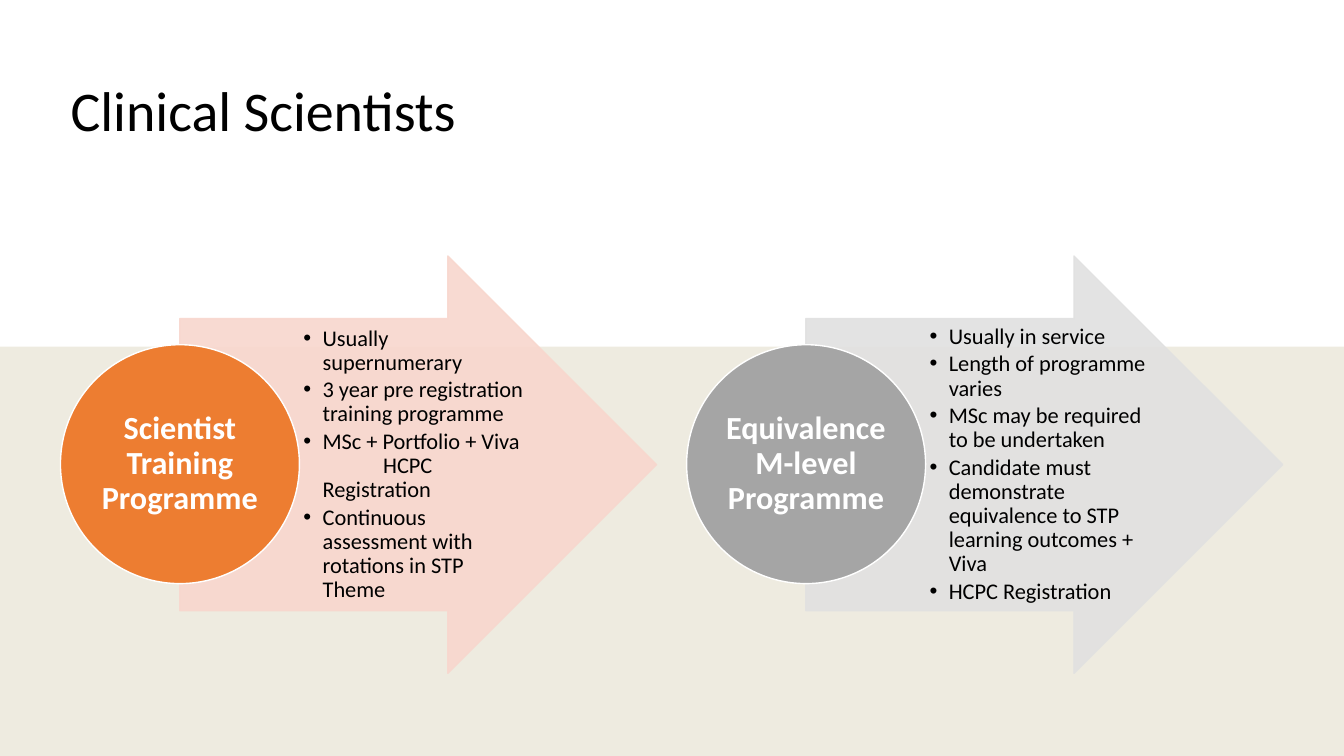
"""Build the Clinical Scientists slide with two training routes."""
from lxml import etree
from pptx import Presentation
from pptx.dml.color import RGBColor
from pptx.enum.shapes import MSO_SHAPE
from pptx.enum.text import MSO_ANCHOR, PP_ALIGN
from pptx.oxml.ns import qn
from pptx.util import Inches, Pt

RECT, ARROW, OVAL = MSO_SHAPE.RECTANGLE, MSO_SHAPE.RIGHT_ARROW, MSO_SHAPE.OVAL
MIDDLE, LEFT, CENTER = MSO_ANCHOR.MIDDLE, PP_ALIGN.LEFT, PP_ALIGN.CENTER
COLORS = {
    "base": "F2F2F2", "tint": "BF9000", "white": "FFFFFF", "black": "000000",
    "orange": "ED7D31", "peach": "F8D7CE", "grey": "A5A5A5", "silver": "E1E1E1",
}
ROUTES = [
    ("Scientist Training Programme", "orange", "peach", [
        "Usually supernumerary",
        "3 year pre registration training programme",
        "MSc + Portfolio + Viva\n\tHCPC Registration",
        "Continuous assessment with rotations in STP Theme",
    ]),
    ("Equivalence M-level Programme", "grey", "silver", [
        "Usually in service",
        "Length of programme varies",
        "MSc may be required to be undertaken",
        "Candidate must demonstrate equivalence to STP learning outcomes + Viva",
        "HCPC Registration",
    ]),
]
ROUTE_PITCH = 46.59


class Deck:
    """Hold the style and current slide; places are percentages of the slide."""

    def __init__(self, prs, font="Calibri"):
        self.prs, self.font = prs, font
        self.s = prs.slides.add_slide(prs.slide_layouts[5])

    def box(self, x, y, w, h):
        """Turn percentages into slide lengths."""
        W, H = self.prs.slide_width, self.prs.slide_height
        return [int(v * size / 100) for v, size in ((x, W), (y, H), (w, W), (h, H))]

    def set_alpha(self, sp, percent):
        """Make the fill and line colours of a shape translucent."""
        for clr in sp._element.spPr.iter(qn("a:srgbClr")):
            etree.SubElement(clr, qn("a:alpha"), val=str(percent * 1000))

    def shape(self, kind, place, fill, line=None, alpha=100):
        """Add a filled preset shape."""
        sp = self.s.shapes.add_shape(kind, *self.box(*place))
        sp.shadow.inherit = False
        sp.fill.solid()
        sp.fill.fore_color.rgb = RGBColor.from_string(COLORS[fill])
        if line:
            sp.line.color.rgb = RGBColor.from_string(COLORS[line])
            sp.line.width = Pt(1)
        else:
            sp.line.fill.background()
        if alpha < 100:
            self.set_alpha(sp, alpha)
        return sp

    def frame(self, sp, left, top, right, bottom):
        """Wrap and centre text vertically within inch margins."""
        tf = sp.text_frame
        tf.word_wrap, tf.vertical_anchor = True, MIDDLE
        tf.margin_left, tf.margin_top = Inches(left), Inches(top)
        tf.margin_right, tf.margin_bottom = Inches(right), Inches(bottom)
        return tf

    def add_text(self, p, text, size, color, align=LEFT, after=0, bold=False):
        """Fill a paragraph with text, run by run."""
        p.alignment, p.line_spacing, p.space_after = align, 0.9, Pt(after)
        p.space_before = Pt(0)
        for i, part in enumerate(text.split("\n")):
            if i:
                p.add_line_break()
            r = p.add_run()
            r.text = part
            r.font.name, r.font.size, r.font.bold = self.font, Pt(size), bold
            r.font.color.rgb = RGBColor.from_string(COLORS[color])

    def title(self, text, place):
        """Place the title in front of the shapes drawn so far."""
        sp = self.s.shapes.title
        sp.left, sp.top, sp.width, sp.height = self.box(*place)
        self.s.shapes[-1]._element.addnext(sp._element)
        tf = self.frame(sp, 0.1, 0.05, 0.1, 0.05)
        self.add_text(tf.paragraphs[0], text, 40, "black", after=6)

    def bullets(self, items, place):
        """Add a bulleted text box."""
        tf = self.frame(self.s.shapes.add_textbox(*self.box(*place)), 0.04, 0.01, 0.02, 0.01)
        for i, item in enumerate(items):
            p = tf.add_paragraph() if i else tf.paragraphs[0]
            self.add_text(p, item, 16, "black", after=2.4)
            pPr = p._p.get_or_add_pPr()
            pPr.set("marL", str(Inches(0.19)))
            pPr.set("indent", str(-Inches(0.19)))
            etree.SubElement(pPr, qn("a:buFont"), typeface="Arial")
            etree.SubElement(pPr, qn("a:buChar"), char="•")
            if "\t" in item:
                tabs = etree.SubElement(pPr, qn("a:tabLst"))
                etree.SubElement(tabs, qn("a:tab"), pos=str(Inches(0.79)), algn="l")

    def route(self, x, name, fill, pale, items):
        """Add an arrow with its bullets and a named circle."""
        arrow = self.shape(ARROW, (x + 8.87, 33.87, 35.48, 55.2), pale, pale, 90)
        arrow.adjustments[0], arrow.adjustments[1] = 0.7, 0.5
        self.bullets(items, (x + 17.78, 42.13, 17.33, 38.67))
        circle = self.shape(OVAL, (x, 45.6, 17.78, 31.6), fill, "white")
        tf = self.frame(circle, 0.02, 0.02, 0.02, 0.02)
        self.add_text(tf.paragraphs[0], name, 23, "white", CENTER, bold=True)


def main():
    """Draw the slide and save it."""
    prs = Presentation()
    prs.slide_width, prs.slide_height = Inches(13.33), Inches(7.5)
    deck = Deck(prs)
    deck.shape(RECT, (0, 0, 100, 100), "base")
    deck.shape(RECT, (0, 0, 100, 100), "tint", alpha=7)
    deck.shape(RECT, (0, 0, 100, 45.87), "white")
    deck.title("Clinical Scientists", (4.5, 5.33, 91, 19.33))
    for i, route in enumerate(ROUTES):
        deck.route(4.5 + i * ROUTE_PITCH, *route)
    prs.save("out.pptx")


if __name__ == "__main__":
    main()
